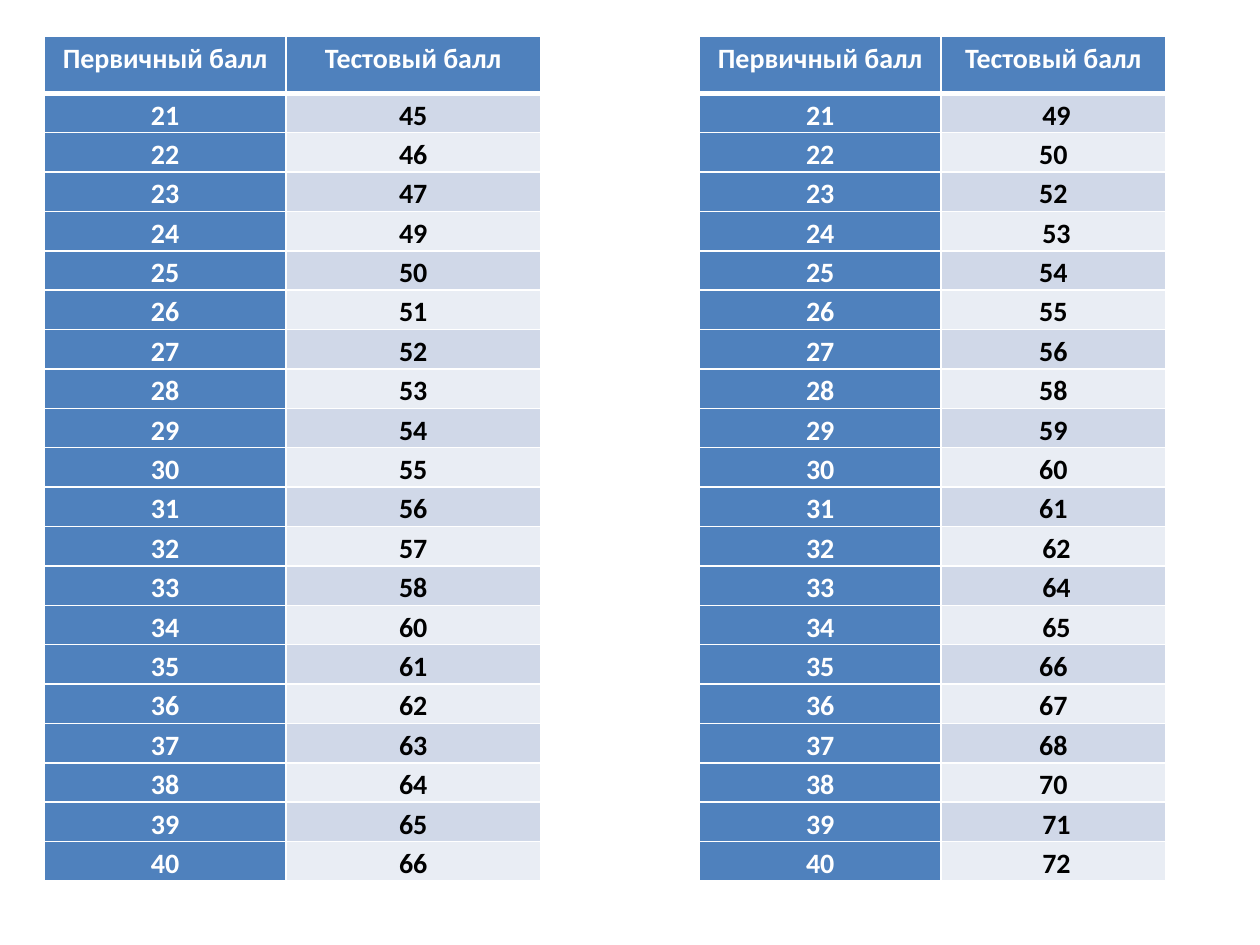
import pptx
import pptx.util
import pptx.dml.color
import pptx.enum.text
import pptx.oxml
import pptx.oxml.ns
import lxml.etree

Inches = pptx.util.Inches
Pt = pptx.util.Pt
RGBColor = pptx.dml.color.RGBColor

WHITE = RGBColor(0xFF, 0xFF, 0xFF)
BLACK = RGBColor(0x00, 0x00, 0x00)
BLUE = RGBColor(0x4F, 0x81, 0xBD)
BANDS = [RGBColor(0xE9, 0xED, 0xF4), RGBColor(0xD0, 0xD8, 0xE8)]

HEADERS = ["Первичный балл", "Тестовый балл"]
FIRST_SCORE = 21
CELL_FORMAT = {
    "margin_left": Inches(0.07),
    "margin_right": Inches(0.07),
    "margin_top": 0,
    "margin_bottom": 0,
}
PARAGRAPH_FORMAT = {
    "alignment": pptx.enum.text.PP_ALIGN.CENTER,
    "line_spacing": 1.15,
}
FONT_FORMAT = {"name": "Calibri", "size": Pt(16), "bold": True}

TABLES = [
    {
        "left": 0.35,
        "widths": [1.92, 2.02],
        "scores": [f" {n} " for n in [*range(45, 48), *range(49, 59), *range(60, 67)]],
    },
    {
        "left": 5.55,
        "widths": [1.92, 1.78],
        "scores": [" 49", " 50 ", " 52 ", " 53", " 54 ", " 55 ", " 56 ",
                   " 58 ", " 59 ", " 60 ", " 61 ", " 62", " 64", " 65",
                   " 66 ", " 67 ", " 68 ", " 70 ", " 71", " 72"],
    },
]


def set_border(cell, side, width):
    tc_pr = cell._tc.get_or_add_tcPr()
    ln = lxml.etree.SubElement(tc_pr, pptx.oxml.ns.qn(f"a:ln{side}"), w=str(Pt(width)))
    fill = lxml.etree.SubElement(ln, pptx.oxml.ns.qn("a:solidFill"))
    lxml.etree.SubElement(fill, pptx.oxml.ns.qn("a:srgbClr"), val=str(WHITE))


def format_cell(cell, text, fill, color, borders):
    for side, width in borders.items():
        set_border(cell, side, width)
    cell.fill.solid()
    cell.fill.fore_color.rgb = fill
    p = cell.text_frame.paragraphs[0]
    r = p.add_run()
    r.text = text
    r.font.color.rgb = color
    for obj, values in ((cell, CELL_FORMAT), (p, PARAGRAPH_FORMAT), (r.font, FONT_FORMAT)):
        for name, value in values.items():
            setattr(obj, name, value)


prs = pptx.Presentation()
prs.slide_width = Inches(10)
prs.slide_height = Inches(7.5)
s = prs.slides.add_slide(prs.slide_layouts[6])

for spec in TABLES:
    rows = [HEADERS] + [
        [str(primary), score] for primary, score in enumerate(spec["scores"], FIRST_SCORE)
    ]
    frame = s.shapes.add_table(
        len(rows), len(HEADERS), Inches(spec["left"]), Inches(0.29),
        Inches(sum(spec["widths"])), Inches(6.22),
    )
    table = frame.table
    for column, width in zip(table.columns, spec["widths"]):
        column.width = Inches(width)
    for i, row in enumerate(rows):
        table.rows[i].height = Inches(0.22 if i else 0.45)
        borders = {"L": 1, "R": 1, "T": 3 if i == 1 else 1, "B": 1 if i else 3}
        for j, text in enumerate(row):
            is_score = i > 0 and j == 1
            format_cell(
                table.cell(i, j), text,
                BANDS[i % 2] if is_score else BLUE,
                BLACK if is_score else WHITE,
                borders,
            )
    frame.height = Inches(6.22)

prs.save("out.pptx")
